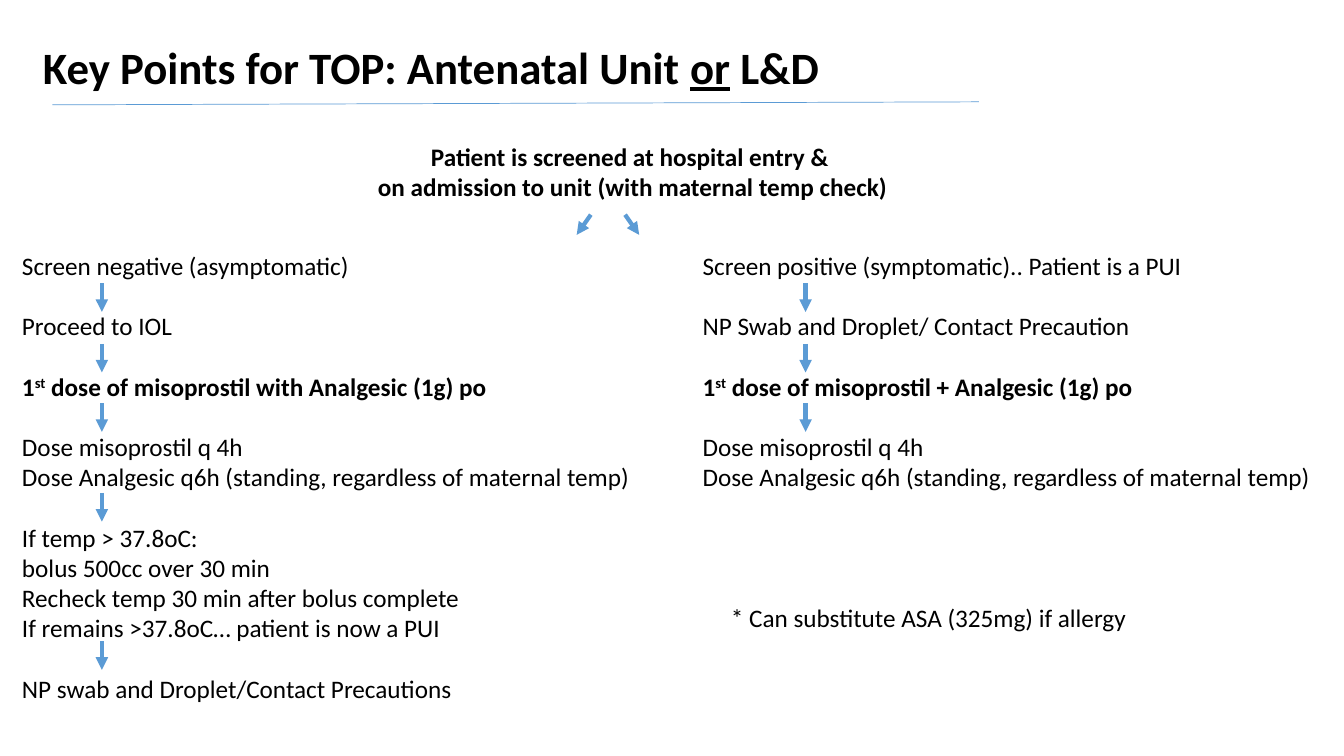
from dataclasses import dataclass

from lxml import etree
from pptx import Presentation
from pptx import util as u
from pptx.dml.color import RGBColor
from pptx.enum import text as t
from pptx.enum.shapes import MSO_CONNECTOR
from pptx.oxml.ns import qn

WIDE, HIGH = 13.33, 7.5
BLACK = RGBColor(0x00, 0x00, 0x00)
BLUE = RGBColor(0x5B, 0x9B, 0xD5)
FONT = "Calibri"
LINE = u.Pt(21.6)


@dataclass(frozen=True)
class Run:
    text: str
    bold: bool = False
    under: bool = False
    sup: bool = False


@dataclass(frozen=True)
class Box:
    left: float
    top: float
    width: float
    height: float
    steps: list[list[list[Run]]]
    size: int = 18
    center: bool = False
    wrap: bool = True
    lead: float = 1.0
    after: int = 0


@dataclass(frozen=True)
class Link:
    x1: float
    y1: float
    x2: float
    y2: float
    weight: float = 3
    arrow: bool = True


def across(share: float) -> u.Emu:
    return u.Inches(WIDE * share / 100)


def down(share: float) -> u.Emu:
    return u.Inches(HIGH * share / 100)


def plain(*lines: str) -> list[list[Run]]:
    return [[Run(line)] for line in lines]


def first(drug: str) -> list[list[Run]]:
    return [[Run("1", True), Run("st", True, sup=True),
             Run(f" dose of misoprostil {drug} (1g) po", True)]]


def write(para, run: Run, size: int) -> None:
    part = para.add_run()
    part.text = run.text
    font = part.font
    font.name, font.size, font.bold = FONT, u.Pt(size), run.bold
    font.underline = run.under
    font.color.rgb = BLACK
    if run.sup:
        font._element.set("baseline", "30000")


def put(slide, box: Box) -> None:
    shape = slide.shapes.add_textbox(across(box.left), down(box.top),
                                     across(box.width), down(box.height))
    frame = shape.text_frame
    frame.word_wrap = box.wrap
    frame.auto_size = t.MSO_AUTO_SIZE.SHAPE_TO_FIT_TEXT
    rows = [(step, row, line) for step, lines in enumerate(box.steps)
            for row, line in enumerate(lines)]
    for step, row, line in rows:
        fresh = step == 0 and row == 0
        para = frame.paragraphs[0] if fresh else frame.add_paragraph()
        para.alignment = t.PP_ALIGN.CENTER if box.center else t.PP_ALIGN.LEFT
        para.line_spacing = box.lead
        para.space_before = LINE if step and row == 0 else u.Pt(0)
        para.space_after = u.Pt(box.after)
        for run in line:
            write(para, run, box.size)


def draw(slide, link: Link) -> None:
    shape = slide.shapes.add_connector(
        MSO_CONNECTOR.STRAIGHT, across(link.x1), down(link.y1),
        across(link.x2), down(link.y2))
    shape.line.color.rgb = BLUE
    shape.line.width = u.Pt(link.weight)
    if link.arrow:
        tail = etree.SubElement(shape.line._get_or_add_ln(), qn("a:tailEnd"))
        tail.set("type", "triangle")
    etree.SubElement(shape._element.spPr, qn("a:effectLst"))


DOSE = plain("Dose misoprostil q 4h",
             "Dose Analgesic q6h (standing, regardless of maternal temp)")

HEAD = [[[Run("Key Points for TOP: Antenatal Unit ", True),
          Run("or", True, under=True), Run(" L&D", True)]]]
ENTRY = [[[Run("Patient is screened at hospital entry & ", True)],
          [Run("on admission to unit (with maternal temp check)", True)]]]
CLEAR = [
    plain("Screen negative (asymptomatic)"),
    plain("Proceed to IOL"),
    first("with Analgesic"),
    DOSE,
    plain("If temp > 37.8oC:", "bolus 500cc over 30 min",
          "Recheck temp 30 min after bolus complete",
          "If remains >37.8oC… patient is now a PUI"),
    plain("NP swab and Droplet/Contact Precautions"),
]
ILL = [
    plain("Screen positive (symptomatic).. Patient is a PUI"),
    plain("NP Swab and Droplet/ Contact Precaution"),
    first("+ Analgesic"),
    DOSE,
]
NOTE = [plain("* Can substitute ASA (325mg) if allergy")]

BOXES = [
    Box(2.18, 4.13, 59.79, 9.07, HEAD, 32, True, False, 1.07, 8),
    Box(22.88, 18, 48.39, 9.47, ENTRY, center=True),
    Box(0.9, 32.4, 48.46, 61.87, CLEAR),
    Box(51.54, 32.4, 48.46, 41.73, ILL),
    Box(53.64, 79.07, 42.31, 5.33, NOTE),
]

TOPS = [37.47, 45.47, 53.33, 65.2, 84.8]
DROP = 3.8
FLOWS = [(7.58, TOPS), (59.94, TOPS[:3])]
LINKS = [
    Link(3.9, 13.87, 72.84, 13.47, 0.5, False),
    Link(43.96, 28.4, 42.91, 31.07),
    Link(46.51, 28.4, 47.56, 31.07),
    *(Link(x, top, x, top + DROP) for x, tops in FLOWS for top in tops),
]


def main() -> None:
    deck = Presentation()
    deck.slide_width, deck.slide_height = u.Inches(WIDE), u.Inches(HIGH)
    slide = deck.slides.add_slide(deck.slide_layouts[6])
    for box in BOXES:
        put(slide, box)
    for link in LINKS:
        draw(slide, link)
    deck.save("out.pptx")


if __name__ == "__main__":
    main()
